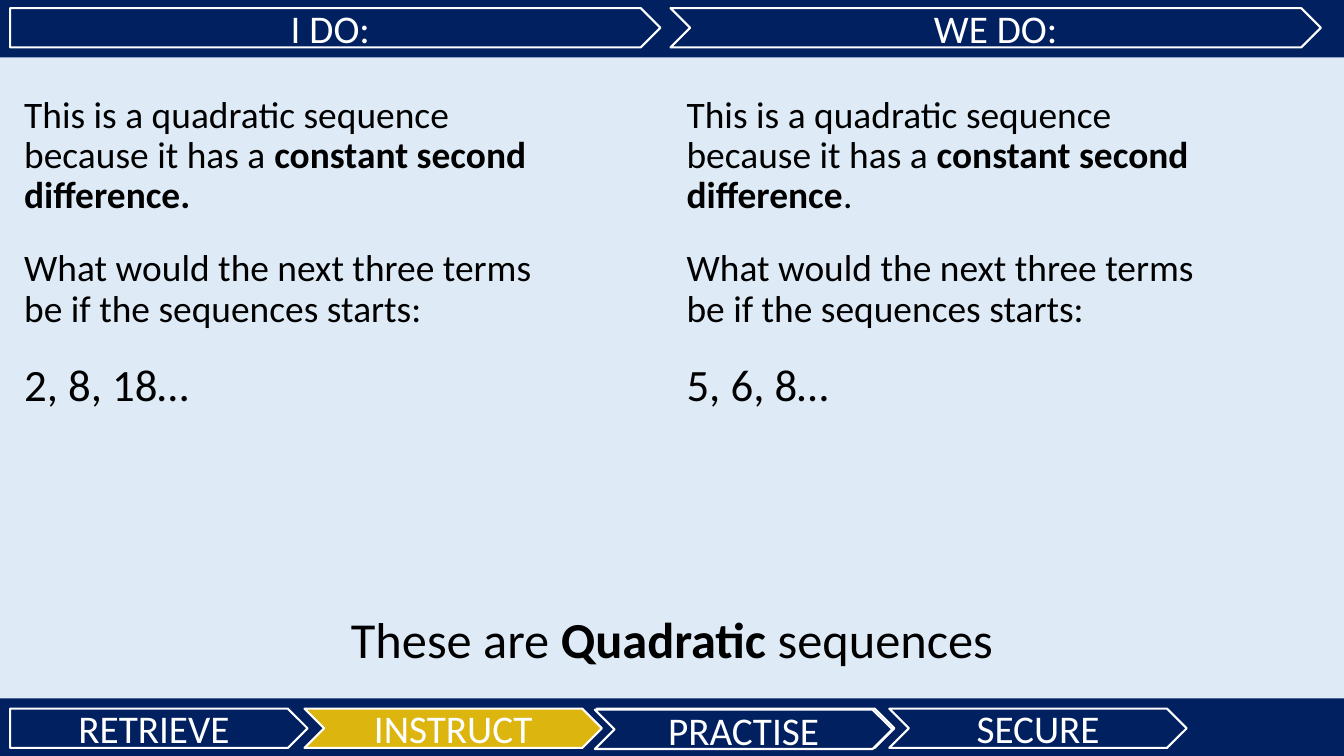
import pptx
import pptx.util
import pptx.dml.color
import pptx.enum.shapes
import pptx.enum.text

Inches = pptx.util.Inches
Pt = pptx.util.Pt
RGBColor = pptx.dml.color.RGBColor
MSO_SHAPE = pptx.enum.shapes.MSO_SHAPE
PP_ALIGN = pptx.enum.text.PP_ALIGN
MSO_ANCHOR = pptx.enum.text.MSO_ANCHOR

NAVY = RGBColor(0x00, 0x20, 0x60)
GOLD = RGBColor(0xDC, 0xB5, 0x0E)
WHITE = RGBColor(0xFF, 0xFF, 0xFF)
BLACK = RGBColor(0x00, 0x00, 0x00)
PALE_BLUE = RGBColor(0xDE, 0xEB, 0xF7)
FONT = "Calibri"

SLIDE_W, SLIDE_H = 13.33, 7.5
BAR_H, ARROW_H = 0.57, 0.39
STAGE_W, HEADING_W = 2.95, 6.45
PENTAGON, CHEVRON = MSO_SHAPE.PENTAGON, MSO_SHAPE.CHEVRON

STAGES = [
    ("INSTRUCT", CHEVRON, 3.02, 7.03, GOLD),
    ("", CHEVRON, 5.92, 7.03, NAVY),
    ("RETRIEVE", PENTAGON, 0.1, 7.03, NAVY),
    ("PRACTISE", CHEVRON, 5.9, 7.04, NAVY),
    ("SECURE", CHEVRON, 8.82, 7.03, NAVY),
]
HEADINGS = [
    ("I DO:", PENTAGON, 0.1, 0.08, NAVY),
    ("WE DO:", CHEVRON, 6.65, 0.08, NAVY),
]
REASON = "This is a quadratic sequence because it has a "
QUESTION = "What would the next three terms be if the sequences starts:"
EXAMPLES = [
    (0.24, [("constant second difference.", True)], "2, 8, 18…"),
    (6.81, [("constant second difference", True), (".", False)], "5, 6, 8…"),
]
SUMMARY = [("These are ", False), ("Quadratic ", True), ("sequences", False)]


def add_runs(p, runs, size, color):
    for text, bold in runs:
        r = p.add_run()
        r.text = text
        r.font.name = FONT
        r.font.size = Pt(size)
        r.font.bold = bold
        r.font.color.rgb = color


def add_filled(s, shape, x, y, w, h, fill):
    sp = s.shapes.add_shape(shape, Inches(x), Inches(y), Inches(w), Inches(h))
    sp.shadow.inherit = False
    sp.fill.solid()
    sp.fill.fore_color.rgb = fill
    sp.line.fill.background()
    return sp


def add_arrow(s, label, shape, x, y, fill, w):
    sp = add_filled(s, shape, x, y, w, ARROW_H, fill)
    sp.line.color.rgb = WHITE
    sp.line.width = Pt(1.5)
    if label:
        tf = sp.text_frame
        tf.vertical_anchor = MSO_ANCHOR.MIDDLE
        p = tf.paragraphs[0]
        p.alignment = PP_ALIGN.CENTER
        add_runs(p, [(label, False)], 28, WHITE)


def add_text(s, x, y, w, h):
    sp = s.shapes.add_textbox(Inches(x), Inches(y), Inches(w), Inches(h))
    tf = sp.text_frame
    tf.word_wrap = True
    return tf


def add_example(s, x, reason_end, terms):
    tf = add_text(s, x, 0.95, 5.36, 1.09)
    tf.margin_left = tf.margin_right = tf.margin_top = tf.margin_bottom = 0
    paragraphs = [
        ([(REASON, False)] + reason_end, 26.7),
        ([(QUESTION, False)], 26.7),
        ([(terms, False)], 32),
    ]
    for i, (runs, size) in enumerate(paragraphs):
        p = tf.add_paragraph() if i else tf.paragraphs[0]
        p.line_spacing = 0.9
        p.space_before = Pt(10 if i else 0)
        p.space_after = Pt(13.3)
        add_runs(p, runs, size, BLACK)


def main():
    prs = pptx.Presentation()
    prs.slide_width = Inches(SLIDE_W)
    prs.slide_height = Inches(SLIDE_H)
    s = prs.slides.add_slide(prs.slide_layouts[6])
    s.background.fill.solid()
    s.background.fill.fore_color.rgb = PALE_BLUE

    bars = [(SLIDE_H - BAR_H, STAGES, STAGE_W), (0, HEADINGS, HEADING_W)]
    for y, arrows, w in bars:
        add_filled(s, MSO_SHAPE.RECTANGLE, 0, y, SLIDE_W, BAR_H, NAVY)
        for arrow in arrows:
            add_arrow(s, *arrow, w)

    for example in EXAMPLES:
        add_example(s, *example)

    tf = add_text(s, 2.64, 5.98, 8.05, 0.71)
    tf.auto_size = pptx.enum.text.MSO_AUTO_SIZE.SHAPE_TO_FIT_TEXT
    p = tf.paragraphs[0]
    p.alignment = PP_ALIGN.CENTER
    add_runs(p, SUMMARY, 36, BLACK)

    prs.save("out.pptx")


if __name__ == "__main__":
    main()
